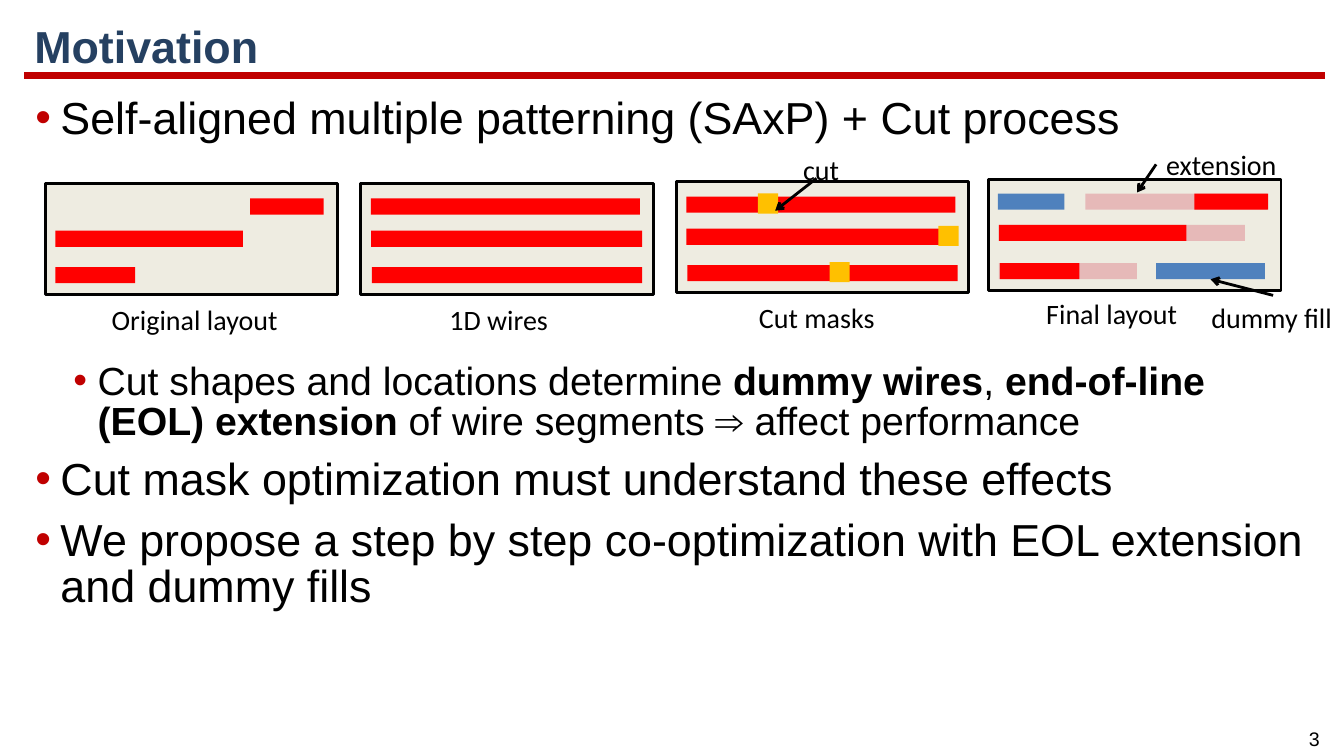
from lxml import etree
from pptx import Presentation
from pptx.dml.color import RGBColor
from pptx.enum.shapes import MSO_CONNECTOR, MSO_SHAPE
from pptx.enum.text import MSO_ANCHOR, MSO_AUTO_SIZE, PP_ALIGN
from pptx.oxml.ns import qn
from pptx.util import Pt

LINE, RECT = MSO_CONNECTOR.STRAIGHT, MSO_SHAPE.RECTANGLE
LEFT, CENTER = PP_ALIGN.LEFT, PP_ALIGN.CENTER
MIDDLE, TOP = MSO_ANCHOR.MIDDLE, MSO_ANCHOR.TOP
FIXED = MSO_AUTO_SIZE.NONE
BOTTOM = 2

COLORS = {
    "black": "000000", "navy": "254061", "rule": "C00000", "panel": "EEECE1",
    "wire": "FF0000", "extend": "E6B9B8", "dummy": "4F81BD", "cut": "FFC000",
}
BAR = 11.5
CUT = 14.4
ROWS = (10.8, 33.8, 59.8)


def color(name):
    return RGBColor.from_string(COLORS[name])


class Board:
    """Holds the text style and the slide being drawn."""

    def __init__(self, slide):
        self.slide = slide
        self.shapes = slide.shapes
        self.head = "Arial"
        self.note = "Calibri"

    def run(self, para, text, size, font, bold=False, tint="black"):
        run = para.add_run()
        run.text = text
        run.font.name = font
        run.font.size = Pt(size)
        run.font.bold = bold
        run.font.color.rgb = color(tint)

    def place(self, holder, left, top, width, height, anchor):
        holder.left, holder.top = Pt(left), Pt(top)
        holder.width, holder.height = Pt(width), Pt(height)
        frame = holder.text_frame
        frame.auto_size = FIXED
        frame.word_wrap = True
        frame.vertical_anchor = anchor
        return frame

    def title(self, text):
        frame = self.place(self.shapes.title, 17.3, 11.5, 929.5, 46.8, MIDDLE)
        para = frame.paragraphs[0]
        para.alignment = LEFT
        para.line_spacing = 0.9
        self.run(para, text, 32, self.head, True, "navy")

    def body(self, items):
        """Each item is level, space before, and (text, bold) runs."""
        frame = self.place(self.slide.placeholders[1], 18, 66.2, 927.4, 437.8, TOP)
        for i, (level, gap, parts) in enumerate(items):
            para = frame.add_paragraph() if i else frame.paragraphs[0]
            para.level = level
            self.bullet(para, (18, 44.6)[level], (18, 17.3)[level])
            para.alignment = LEFT
            para.line_spacing = 0.85
            para.space_before = Pt(gap)
            for text, bold in parts:
                self.run(para, text, (32, 28)[level], self.head, bold)

    def bullet(self, para, left, hang):
        props = para._p.get_or_add_pPr()
        props.set("marL", str(Pt(left)))
        props.set("indent", str(-Pt(hang)))
        tint = etree.SubElement(props, qn("a:buClr"))
        etree.SubElement(tint, qn("a:srgbClr"), val=COLORS["rule"])
        etree.SubElement(props, qn("a:buFont"), typeface=self.head)
        etree.SubElement(props, qn("a:buChar"), char="•")

    def label(self, text, left, top, width, size=20, font=None, align=LEFT):
        box = self.shapes.add_textbox(Pt(left), Pt(top), Pt(width), Pt(31.7))
        box.text_frame.word_wrap = False
        para = box.text_frame.paragraphs[0]
        para.alignment = align
        self.run(para, text, size, font or self.note)

    def rect(self, left, top, width, height, fill, edge=False):
        shape = self.shapes.add_shape(RECT, Pt(left), Pt(top), Pt(width), Pt(height))
        shape.shadow.inherit = False
        shape.fill.solid()
        shape.fill.fore_color.rgb = color(fill)
        if edge:
            shape.line.color.rgb = color("black")
            shape.line.width = Pt(2)
        else:
            shape.line.fill.background()
        return shape

    def panel(self, left, top, bars, rows=ROWS):
        """Draw a framed layout of (row, offset, width, fill) bars; return the last bar."""
        self.rect(left, top, 208.8, 79.2, "panel", True)
        for row, shift, width, fill in bars:
            last = self.rect(left + shift, top + rows[row], width, BAR, fill)
        return last

    def line(self, x1, y1, x2, y2, tint="black", width=2, arrow=True):
        link = self.shapes.add_connector(LINE, Pt(x1), Pt(y1), Pt(x2), Pt(y2))
        link.line.color.rgb = color(tint)
        link.line.width = Pt(width)
        if arrow:
            etree.SubElement(link.line._get_or_add_ln(), qn("a:tailEnd"), type="arrow")
        etree.SubElement(link._element.spPr, qn("a:effectLst"))
        return link


def main():
    deck = Presentation()
    deck.slide_width, deck.slide_height = Pt(960), Pt(540)
    board = Board(deck.slides.add_slide(deck.slide_layouts[1]))

    board.line(17.3, 54, 946.1, 54, "rule", 4.5, False)
    board.label("3", 923, 515.5, 31.7, 14, board.head, CENTER)
    board.title("Motivation")
    board.body([
        (0, 0, [("Self-aligned multiple patterning (SAxP) + Cut process", False)]),
        (1, 157, [
            ("Cut shapes and locations determine ", False),
            ("dummy wires", True),
            (", ", False),
            ("end-of-line (EOL) extension", True),
            (" of wire segments ⇒ affect performance", False),
        ]),
        (0, 11, [("Cut mask optimization must understand these effects", False)]),
        (0, 11, [("We propose a step by step co-optimization with "
                  "EOL extension and dummy fills", False)]),
    ])

    wires = [(0, 7.2, 192.2, "wire"), (1, 7.2, 193.7, "wire"), (2, 7.9, 193, "wire")]
    board.panel(32.4, 131, [
        (0, 146.2, 52.6, "wire"), (1, 7.2, 133.9, "wire"), (2, 7.2, 56.9, "wire"),
    ])
    board.panel(257.8, 131, wires)
    board.panel(483.1, 129.6, wires)
    for left, top in ((541.4, 138.2), (592.6, 187.2), (670.3, 161.3)):
        board.rect(left, top, CUT, CUT, "cut")
    dummy = board.panel(706.3, 128.2, [
        (0, 6.5, 47.5, "dummy"), (0, 69.1, 129.6, "extend"), (0, 146.9, 52.6, "wire"),
        (1, 7.2, 175.7, "extend"), (1, 7.2, 133.9, "wire"),
        (2, 7.2, 98.6, "extend"), (2, 7.9, 56.9, "wire"), (2, 119.5, 77.8, "dummy"),
    ], (10.1, 32.4, 59.8))

    for text, left, top, width in (
        ("Original layout", 72.7, 212.4, 133.9),
        ("1D wires", 313.9, 212.4, 85.7),
        ("Cut masks", 535, 211, 97.9),
        ("Final layout", 740.2, 208.1, 108.7),
        ("cut", 566.6, 105.1, 40.3),
        ("extension", 825.8, 101.5, 94.3),
        ("dummy fill", 858.2, 211, 101.5),
    ):
        board.label(text, left, top, width)

    board.line(583.2, 127.4, 553.7, 150.5)
    board.line(825.8, 117.4, 812.2, 137.5)
    board.line(909.4, 211, 864.7, 199.5).end_connect(dummy, BOTTOM)

    deck.save("out.pptx")


if __name__ == "__main__":
    main()
